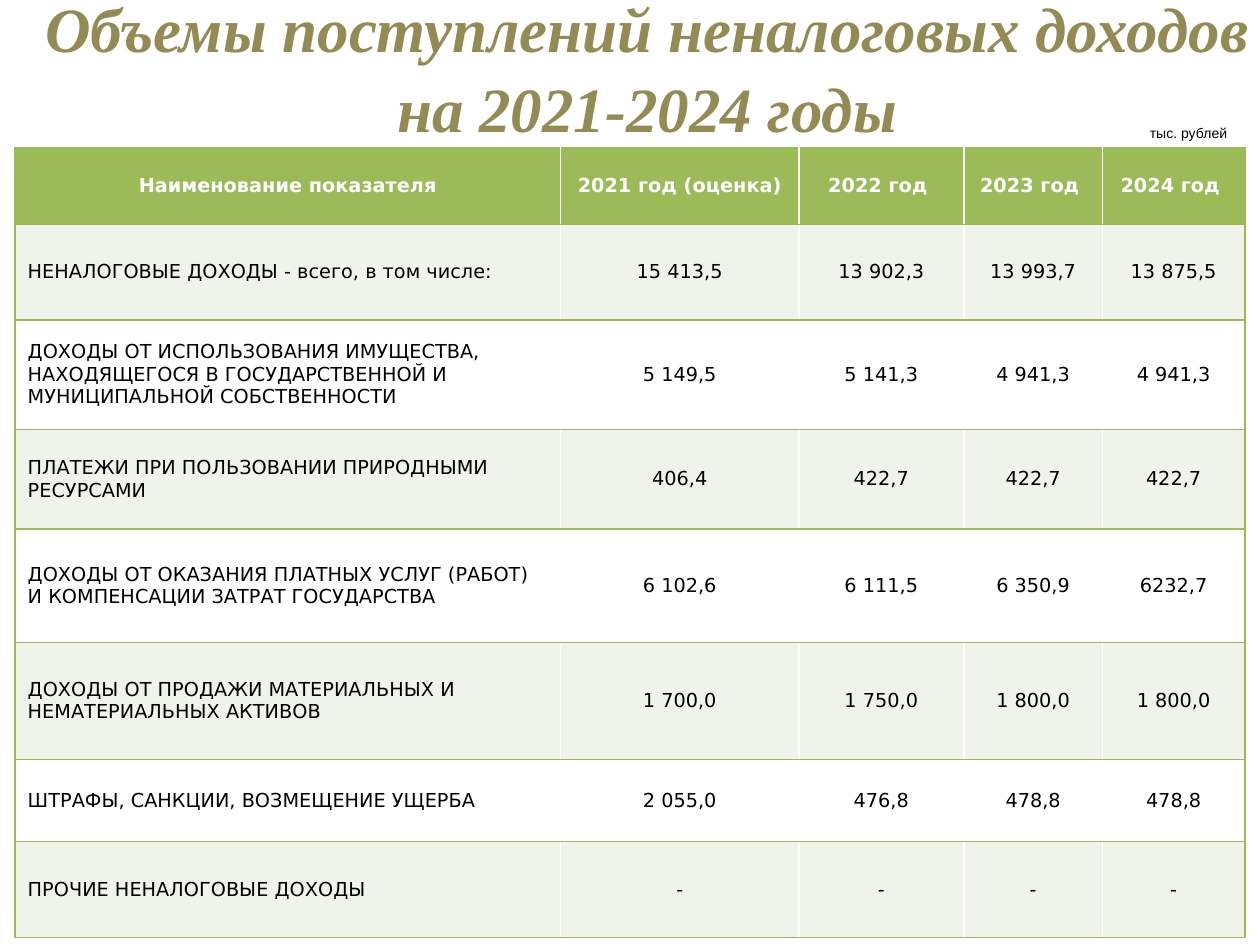
from pptx import Presentation
from pptx.dml.color import RGBColor
from pptx.enum.text import MSO_ANCHOR as Anchor, PP_ALIGN as Align
from pptx.oxml.ns import qn
from pptx.util import Inches, Pt
from lxml.etree import SubElement

# Content
TITLE = "Объемы поступлений неналоговых доходов на 2021-2024 годы"
UNIT = "тыс. рублей"
ROWS = [
    ("Наименование показателя", "2021 год (оценка)", "2022 год ", "2023 год ", "2024 год "),
    ("НЕНАЛОГОВЫЕ ДОХОДЫ - всего, в том числе:", "15 413,5", "13 902,3", "13 993,7", "13 875,5"),
    ("ДОХОДЫ ОТ ИСПОЛЬЗОВАНИЯ ИМУЩЕСТВА, НАХОДЯЩЕГОСЯ В ГОСУДАРСТВЕННОЙ И "
     "МУНИЦИПАЛЬНОЙ СОБСТВЕННОСТИ", "5 149,5", "5 141,3", "4 941,3", "4 941,3"),
    ("ПЛАТЕЖИ ПРИ ПОЛЬЗОВАНИИ ПРИРОДНЫМИ РЕСУРСАМИ", "406,4", "422,7", "422,7", "422,7"),
    ("ДОХОДЫ ОТ ОКАЗАНИЯ ПЛАТНЫХ УСЛУГ (РАБОТ) И КОМПЕНСАЦИИ ЗАТРАТ ГОСУДАРСТВА",
     "6 102,6", "6 111,5", "6 350,9", "6232,7"),
    ("ДОХОДЫ ОТ ПРОДАЖИ МАТЕРИАЛЬНЫХ И НЕМАТЕРИАЛЬНЫХ АКТИВОВ",
     "1 700,0", "1 750,0", "1 800,0", "1 800,0"),
    ("ШТРАФЫ, САНКЦИИ, ВОЗМЕЩЕНИЕ УЩЕРБА", "2 055,0", "476,8", "478,8", "478,8"),
    ("ПРОЧИЕ НЕНАЛОГОВЫЕ ДОХОДЫ", "-", "-", "-", "-"),
]

# Theme and grid
THEME = dict(green="9BBB59", band="EFF3EA", white="FFFFFF", black="000000", olive="948A54",
             title=36, cell=11, unit=8,
             serif="Times New Roman", sans="DejaVu Sans", plain="Arial")
COLS = [4.33, 1.89, 1.31, 1.1, 1.13]
HEIGHTS = [0.61, 0.76, 0.87, 0.79, 0.9, 0.93, 0.65, 0.76]
LEFT, TOP = 0.12, 1.17


def write(tf, text, size, font, color, align=Align.LEFT, bold=False, italic=False):
    p = tf.paragraphs[0]
    p.alignment = align
    r = p.add_run()
    r.text = text
    f = r.font
    f.size, f.name, f.bold, f.italic = Pt(size), font, bold, italic
    f.color.rgb = RGBColor.from_string(color)
    return p


def set_borders(cell, sides):
    """Insert the border lines ahead of the cell's fill."""
    tc_pr = cell._tc.get_or_add_tcPr()
    for i, side in enumerate(sides):
        ln = SubElement(tc_pr, qn(f"a:ln{side}"), w=str(Pt(1)))
        fill = SubElement(ln, qn("a:solidFill"))
        SubElement(fill, qn("a:srgbClr"), val=THEME["green"])
        tc_pr.insert(i, ln)


def add_text(slide, box, text, wrap=True, anchor=Anchor.TOP, **fmt):
    tf = slide.shapes.add_textbox(*map(Inches, box)).text_frame
    tf.word_wrap, tf.vertical_anchor = wrap, anchor
    return write(tf, text, **fmt)


def add_income_table(slide):
    frame = slide.shapes.add_table(len(ROWS), len(COLS), Inches(LEFT), Inches(TOP),
                                   Inches(sum(COLS)), Inches(sum(HEIGHTS)))
    table = frame.table
    for col, width in zip(table.columns, COLS):
        col.width = Inches(width)
    for row, height in zip(table.rows, HEIGHTS):
        row.height = Inches(height)
    for i, values in enumerate(ROWS):
        head = i == 0
        fill = THEME["green"] if head else THEME["band"] if i % 2 else THEME["white"]
        for j, text in enumerate(values):
            cell = table.cell(i, j)
            cell.vertical_anchor = Anchor.MIDDLE
            cell.fill.solid()
            cell.fill.fore_color.rgb = RGBColor.from_string(fill)
            sides = ["L"] * (j == 0) + ["R"] * (j == len(COLS) - 1) + ["T", "B"]
            set_borders(cell, sides)
            write(cell.text_frame, text, THEME["cell"], THEME["sans"],
                  THEME["white"] if head else THEME["black"],
                  align=Align.CENTER if head or j else Align.LEFT, bold=head)


prs = Presentation()
prs.slide_width, prs.slide_height = Inches(10), Inches(7.5)
s = prs.slides.add_slide(prs.slide_layouts[6])

# Table, unit note and title
add_income_table(s)
add_text(s, (9.01, 0.94, 0.83, 0.24), UNIT, wrap=False, size=THEME["unit"],
         font=THEME["plain"], color=THEME["black"], align=Align.RIGHT)
p = add_text(s, (-0.59, 0.21, 10.67, 0.62), TITLE, anchor=Anchor.MIDDLE, size=THEME["title"],
             font=THEME["serif"], color=THEME["olive"], align=Align.CENTER,
             bold=True, italic=True)
p.line_spacing = 1.05
p._p.get_or_add_pPr().set("marL", str(Inches(0.78)))

prs.save("out.pptx")
